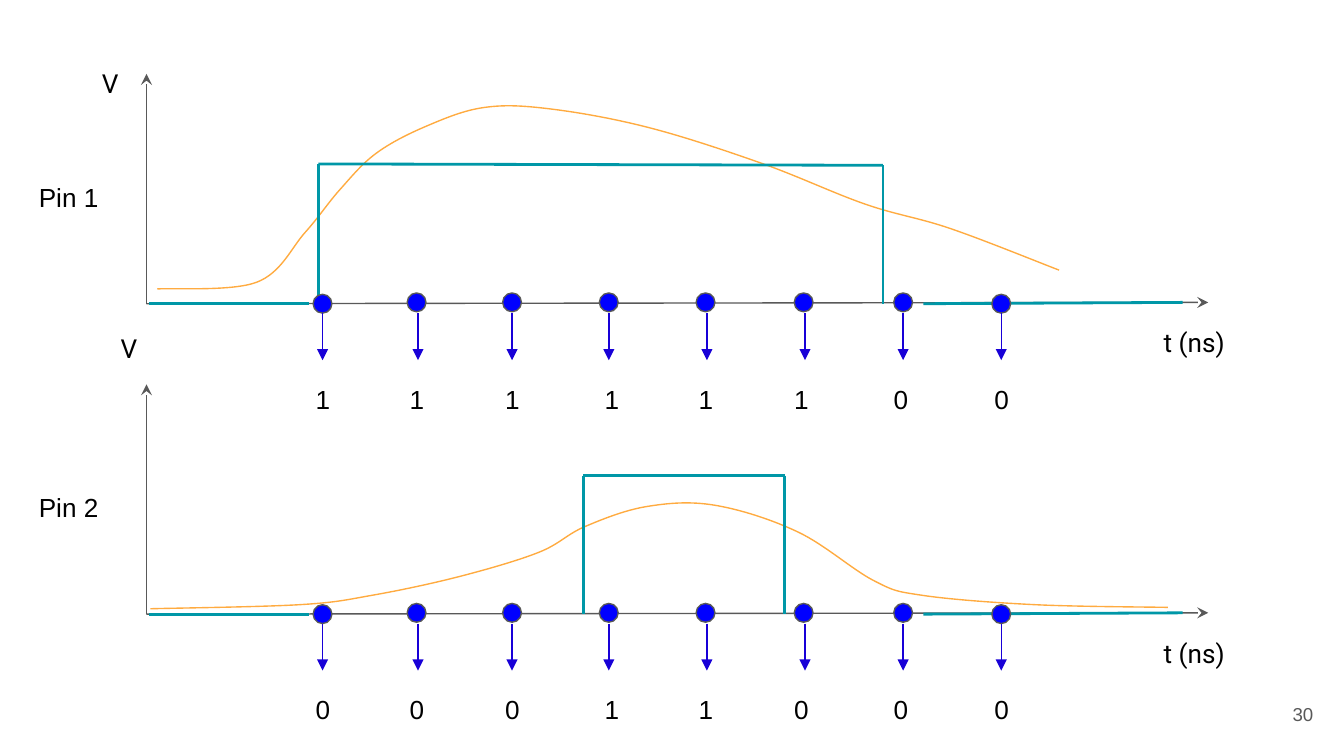
"""Builds a slide showing two pin voltages sampled into bits over time."""
from dataclasses import dataclass

from lxml.etree import SubElement
from pptx import Presentation
from pptx.dml.color import RGBColor
from pptx.enum.shapes import MSO_CONNECTOR, MSO_SHAPE
from pptx.enum.text import MSO_ANCHOR, PP_ALIGN
from pptx.oxml.ns import qn
from pptx.util import Emu, Pt

PX = 9144
SLIDE_WIDTH = 1000 * PX
SLIDE_HEIGHT = SLIDE_WIDTH * 9 // 16


@dataclass(frozen=True)
class Theme:
    axis: str = "595959"
    analog: str = "FFAB40"
    digital: str = "0097A7"
    dot: str = "0000FF"
    arrow: str = "1800D7"
    text: str = "000000"
    body: str = "Arial"
    label: str = "Roboto"
    text_size: int = 14
    page_size: int = 10
    thin: float = 0.75
    thick: float = 1.5


THEME = Theme()
PAGE_NUMBER = "30"
AXIS_LEFT, AXIS_RIGHT, AXIS_HEIGHT = 109, 899, 171
DOT_SIZE = 14
DOTS = [(233, -7), (303, -8), (374, -8), (446, -8), (518, -8), (591, -8), (665, -8), (738, -7)]
ARROWS = [240, 311, 381, 453, 526, 599, 672, 745]
BIT_LEFTS = [225, 295, 366, 440, 510, 581, 655, 730]
PINS = [
    {
        "name": "Pin 1", "baseline": 226, "bits": "11111100", "volt_at": (66, 40),
        "pulse": [(237, 0), (237, 104), (657, 103), (657, 0)],
        "analog": [(117, 11), (191, 16), (227, 53), (253, 85), (280, 112), (317, 132), (360, 146),
                   (409, 145), (483, 131), (568, 104), (644, 74), (707, 56), (788, 25)],
    },
    {
        "name": "Pin 2", "baseline": 457, "bits": "00011000", "volt_at": (80, 237),
        "pulse": [(434, 0), (434, 103), (584, 103), (584, 0)],
        "analog": [(112, 4), (223, 7), (277, 14), (342, 28), (401, 46), (435, 65), (481, 80),
                   (532, 81), (594, 61), (650, 25), (686, 14), (770, 7), (869, 5)],
    },
]


def apply(target, values):
    for name, value in values.items():
        setattr(target, name, value)


def style_line(line, color, width):
    line.color.rgb = RGBColor.from_string(color)
    line.width = Pt(width)


def add_text(slide, text, box, font=THEME.body, size=THEME.text_size, color=THEME.text,
             align=PP_ALIGN.LEFT, anchor=MSO_ANCHOR.TOP):
    frame = slide.shapes.add_textbox(*(Emu(v * PX) for v in box)).text_frame
    margins = {f"margin_{side}": Emu(10 * PX) for side in ("left", "right", "top", "bottom")}
    apply(frame, {"word_wrap": True, "vertical_anchor": anchor, **margins})
    paragraph = frame.paragraphs[0]
    paragraph.alignment = align
    run = paragraph.add_run()
    run.text = text
    apply(run.font, {"name": font, "size": Pt(size)})
    run.font.color.rgb = RGBColor.from_string(color)


def add_line(slide, start, end, color, width=THEME.thin, arrowhead=None):
    ends = (Emu(v * PX) for v in (*start, *end))
    connector = slide.shapes.add_connector(MSO_CONNECTOR.STRAIGHT, *ends)
    style_line(connector.line, color, width)
    if arrowhead:
        SubElement(connector.line._get_or_add_ln(), qn("a:tailEnd"), type=arrowhead)
    SubElement(connector._element.spPr, qn("a:effectLst"))


def add_curve(slide, points):
    """Draws a Catmull-Rom curve through the points as cubic segments."""
    points = [(x * PX, y * PX) for x, y in points]
    builder = slide.shapes.build_freeform(*points[0])
    builder.add_line_segments(points[1:], close=False)
    curve = builder.convert_to_shape()
    curve.shadow.inherit = False
    curve.fill.background()
    style_line(curve.line, THEME.analog, THEME.thin)
    left, top = (min(axis) for axis in zip(*points))
    local = [(x - left, y - top) for x, y in points]
    padded = [local[0], *local, local[-1]]
    segments = list(curve._element.iter(qn("a:lnTo")))
    for segment, before, start, end, after in zip(segments, padded, local, local[1:], padded[3:]):
        segment.tag = qn("a:cubicBezTo")
        segment.remove(segment[0])
        first = [s + (e - b) / 6 for b, s, e in zip(before, start, end)]
        second = [e - (a - s) / 6 for s, e, a in zip(start, end, after)]
        for x, y in (first, second, end):
            SubElement(segment, qn("a:pt"), x=str(round(x)), y=str(round(y)))


def add_dot(slide, left, top):
    box = (Emu(v * PX) for v in (left, top, DOT_SIZE, DOT_SIZE))
    dot = slide.shapes.add_shape(MSO_SHAPE.OVAL, *box)
    dot.shadow.inherit = False
    dot.fill.solid()
    dot.fill.fore_color.rgb = RGBColor.from_string(THEME.dot)
    style_line(dot.line, THEME.axis, THEME.thin)


def add_pin(slide, pin):
    base = pin["baseline"]
    origin = (AXIS_LEFT, base)
    add_line(slide, origin, (AXIS_LEFT, base - AXIS_HEIGHT), THEME.axis, arrowhead="stealth")
    add_line(slide, origin, (AXIS_RIGHT, base - 1), THEME.axis, arrowhead="stealth")
    add_text(slide, "t (ns)", (856, base + 7, 88, 20), THEME.label)
    add_text(slide, "V", (*pin["volt_at"], 88, 20), THEME.label)
    add_text(slide, pin["name"], (19, base - 101, 71, 43))
    add_curve(slide, [(x, base - height) for x, height in pin["analog"]])

    corners = [(x, base - height) for x, height in pin["pulse"]]
    low_levels = [((111, base), (230, base)), ((687, base), (880, base - 1))]
    for start, end in [*low_levels, *zip(corners, corners[1:])]:
        add_line(slide, start, end, THEME.digital, THEME.thick)

    for (dot_left, dot_top), arrow, bit_left, bit in zip(DOTS, ARROWS, BIT_LEFTS, pin["bits"]):
        add_dot(slide, dot_left, base + dot_top)
        add_line(slide, (arrow, base + 7), (arrow, base + 42), THEME.arrow, arrowhead="triangle")
        add_text(slide, bit, (bit_left, base + 49, 31, 51))


def main():
    deck = Presentation()
    apply(deck, {"slide_width": Emu(SLIDE_WIDTH), "slide_height": Emu(SLIDE_HEIGHT)})
    slide = deck.slides.add_slide(deck.slide_layouts[6])
    for pin in PINS:
        add_pin(slide, pin)
    add_text(slide, PAGE_NUMBER, (927, 510, 60, 43), size=THEME.page_size, color=THEME.axis,
             align=PP_ALIGN.RIGHT, anchor=MSO_ANCHOR.MIDDLE)
    deck.save("out.pptx")


if __name__ == "__main__":
    main()
